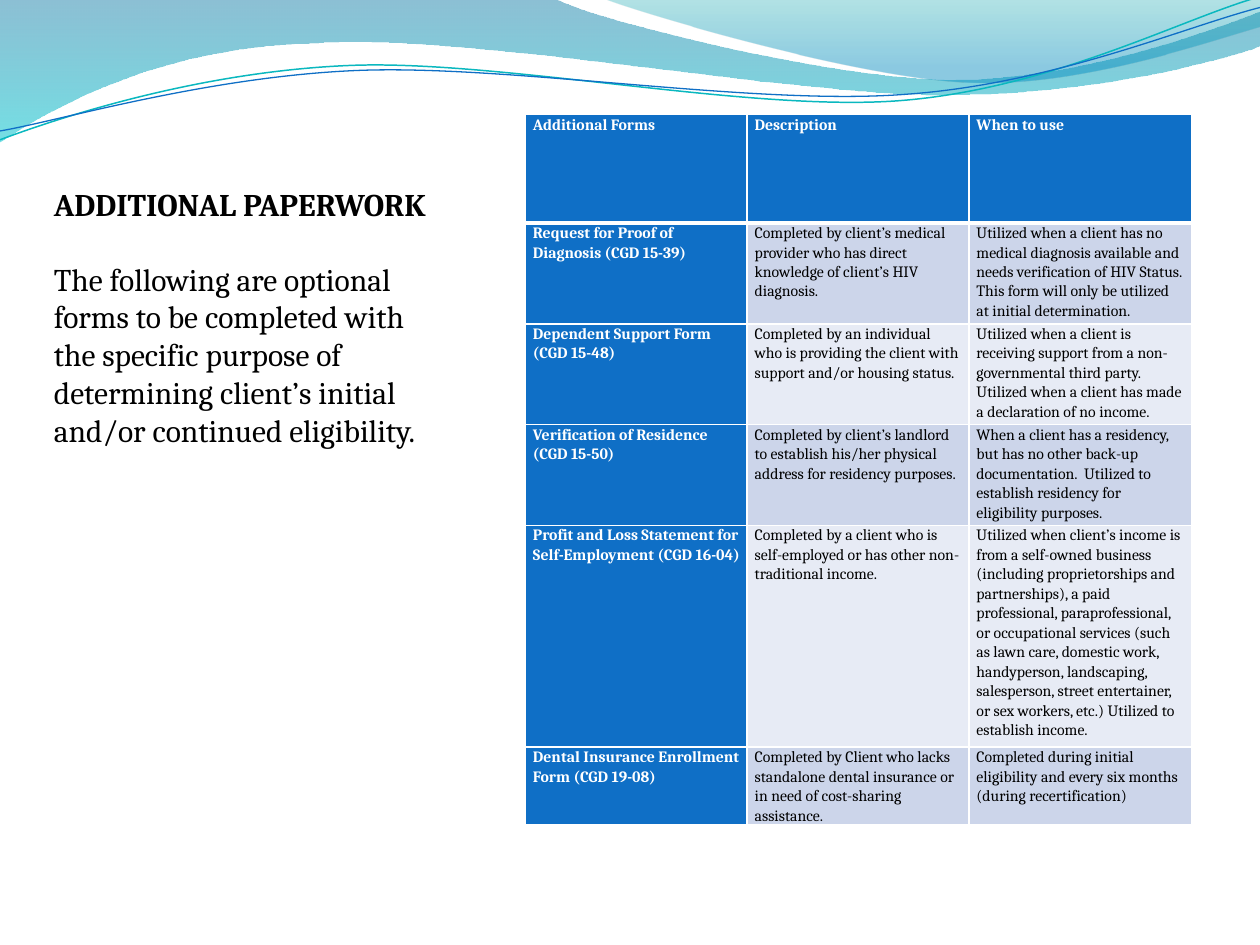
from math import cos, radians, sin

from lxml.etree import SubElement
from pptx import Presentation
from pptx.dml.color import RGBColor
from pptx.oxml.ns import qn
from pptx.util import Inches, Pt

BLACK = RGBColor(0, 0, 0)
WHITE = RGBColor(255, 255, 255)
BLUE = RGBColor(0x0F, 0x6F, 0xC6)
TEAL = RGBColor(0x0A, 0xB8, 0xBF)
BAND_DARK = RGBColor(0xCC, 0xD5, 0xEA)
BAND_LIGHT = RGBColor(0xE7, 0xEB, 0xF5)
DEEP_BLUE = RGBColor(0x00, 0x74, 0xA1)
CYAN = RGBColor(0x00, 0xC6, 0xCF)
DEEP_TEAL = RGBColor(0x00, 0xA1, 0xA9)
SKY = RGBColor(0x00, 0x8B, 0xBF)

BACK_WAVE = [
    [(0, 0)],
    [(4.4, -0.01)],
    [(4.76, 0.17), (6.64, 0.63), (7.58, 0.63)],
    [(8.53, 0.63), (9.58, 0.26), (10, 0.09)],
    [(10.01, 0.36)],
    [(9.83, 0.44), (8.7, 0.76), (7.46, 0.75)],
    [(6.22, 0.75), (3.82, 0.28), (2.57, 0.34)],
    [(1.29, 0.36), (0.46, 0.83), (-0.01, 1.13)],
]
FRONT_WAVE = [
    [(4.79, -0.01)],
    [(5.09, 0.11), (6.82, 0.62), (7.69, 0.65)],
    [(8.56, 0.69), (9.61, 0.32), (10, 0.21)],
    [(10, 0)],
]
TEAL_STRAND = [
    [(0, 1.11)],
    [(0.48, 0.93), (1.58, 0.57), (2.77, 0.52)],
    [(3.95, 0.47), (5.93, 0.89), (7.13, 0.8)],
    [(8.33, 0.71), (9.38, 0.15), (9.98, -0.02)],
]
BLUE_STRAND = [
    [(0, 1.04)],
    [(0.47, 0.96), (1.64, 0.61), (2.83, 0.56)],
    [(4.03, 0.51), (5.97, 0.84), (7.17, 0.75)],
    [(8.36, 0.67), (9.41, 0.21), (10, 0.06)],
]
STRAND_TILT = -2.7

FORMS = [
    ("Additional Forms", "Description", "When to use"),
    ("Request for Proof of Diagnosis (CGD 15-39)",
     "Completed by client’s medical provider who has direct knowledge of client’s HIV diagnosis.",
     "Utilized when a client has no medical diagnosis available and needs verification of HIV Status. "
     "This form will only be utilized at initial determination."),
    ("Dependent Support Form\n(CGD 15-48)",
     "Completed by an individual who is providing the client with support and/or housing status.",
     "Utilized when a client is receiving support from a non-governmental third party.  "
     "Utilized when a client has made a declaration of no income."),
    ("Verification of Residence\n(CGD 15-50)",
     "Completed by client’s landlord to establish his/her physical address for residency purposes.",
     "When a client has a residency, but has no other back-up documentation.  "
     "Utilized to establish residency for eligibility purposes."),
    ("Profit and Loss Statement for Self-Employment (CGD 16-04)",
     "Completed by a client who is self-employed or has other non-traditional income.",
     "Utilized when client’s income is from a self-owned business (including proprietorships and "
     "partnerships), a paid professional, paraprofessional, or occupational services (such as lawn care, "
     "domestic work, handyperson, landscaping, salesperson, street entertainer, or sex workers, etc.) "
     "Utilized to establish income."),
    ("Dental Insurance Enrollment Form (CGD 19-08)",
     "Completed by Client who lacks standalone dental insurance or in need of cost-sharing assistance.",
     "Completed during initial eligibility and every six months (during recertification)"),
]
COLUMN_WIDTHS = [1.76, 1.76, 1.77]
ROW_HEIGHTS = [0.86, 0.8, 0.8, 0.8, 1.76, 0.48]


def turn(x, y, degrees):
    angle = radians(degrees)
    return x * cos(angle) - y * sin(angle), x * sin(angle) + y * cos(angle)


class SlideWriter:
    font = "Cambria"

    def __init__(self, slide):
        self.slide = slide

    def outline(self, segments, close, tilt=0):
        curves = [[tuple(Inches(v) for v in turn(x, y, -tilt)) for x, y in segment]
                  for segment in segments]
        anchors = [curve[-1] for curve in curves]
        builder = self.slide.shapes.build_freeform(*anchors[0], scale=1.0)
        builder.add_line_segments(anchors[1:], close=close)
        shape = builder.convert_to_shape()
        shape.shadow.inherit = False
        for line, curve in zip(list(shape._element.iter(qn("a:lnTo"))), curves[1:]):
            if len(curve) == 3:
                line.tag = qn("a:cubicBezTo")
                for position, (x, y) in enumerate(curve[:2]):
                    control = SubElement(line, qn("a:pt"), x=str(x - shape.left), y=str(y - shape.top))
                    line.insert(position, control)
        center_x, center_y = shape.left + shape.width / 2, shape.top + shape.height / 2
        turned_x, turned_y = turn(center_x, center_y, tilt)
        shape.left += round(turned_x - center_x)
        shape.top += round(turned_y - center_y)
        shape.rotation = tilt
        return shape

    def wave(self, segments, stops):
        shape = self.outline(segments, True)
        shape.line.fill.background()
        shape.fill.gradient()
        shape.fill.gradient_angle = 270
        for stop, (position, color, _) in zip(shape.fill.gradient_stops, stops):
            stop.position = position
            stop.color.rgb = color
        colors = shape._element.spPr.iter(qn("a:srgbClr"))
        for color, (_, _, opacity) in zip(colors, stops):
            SubElement(color, qn("a:alpha"), val=str(opacity * 1000))

    def strand(self, segments, color, width):
        shape = self.outline(segments, False, STRAND_TILT)
        shape.fill.background()
        shape.line.color.rgb = color
        shape.line.width = Pt(width)

    def style(self, paragraph, size, color, bold):
        for run in paragraph.runs:
            run.font.name = self.font
            run.font.size = Pt(size)
            run.font.color.rgb = color
            run.font.bold = bold

    def text(self, left, top, width, height, heading, body):
        frame = self.slide.shapes.add_textbox(
            Inches(left), Inches(top), Inches(width), Inches(height)).text_frame
        frame.word_wrap = True
        frame.text = f"{heading}\n{body}"
        title, explanation = frame.paragraphs
        explanation.space_before = Pt(21)
        self.style(title, 18, BLACK, True)
        self.style(explanation, 18, BLACK, False)

    def border(self, cell, side, width):
        line = SubElement(cell._tc.get_or_add_tcPr(), qn(f"a:ln{side}"), w=str(Pt(width)))
        fill = SubElement(line, qn("a:solidFill"))
        SubElement(fill, qn("a:srgbClr"), val=str(WHITE))

    def cell(self, cell, text, row, column):
        cell.margin_left = cell.margin_right = Inches(0.06)
        cell.margin_top = cell.margin_bottom = 0
        widths = {"L": 1, "R": 1, "T": 3 if row == 1 else 1, "B": 3 if row == 0 else 1}
        for side, width in widths.items():
            self.border(cell, side, width)
        is_label = row == 0 or column == 0
        cell.fill.solid()
        cell.fill.fore_color.rgb = BLUE if is_label else BAND_DARK if row % 2 else BAND_LIGHT
        cell.text_frame.text = text
        for paragraph in cell.text_frame.paragraphs:
            paragraph.line_spacing = 1.07
            self.style(paragraph, 9, WHITE if is_label else BLACK, is_label)

    def table(self, left, top, rows, widths, heights):
        table = self.slide.shapes.add_table(
            len(rows), len(widths), Inches(left), Inches(top),
            Inches(sum(widths)), Inches(sum(heights))).table
        for column, width in zip(table.columns, widths):
            column.width = Inches(width)
        for row, height in zip(table.rows, heights):
            row.height = Inches(height)
        for r, texts in enumerate(rows):
            for c, text in enumerate(texts):
                self.cell(table.cell(r, c), text, r, c)


def main():
    deck = Presentation()
    deck.slide_width, deck.slide_height = Inches(10), Inches(7.5)
    writer = SlideWriter(deck.slides.add_slide(deck.slide_layouts[6]))
    writer.wave(BACK_WAVE, [(0, DEEP_BLUE, 45), (1, CYAN, 55)])
    writer.wave(FRONT_WAVE, [(0, DEEP_TEAL, 30), (0.8, SKY, 45)])
    writer.strand(TEAL_STRAND, TEAL, 0.85)
    writer.strand(BLUE_STRAND, BLUE, 0.75)
    writer.table(4.17, 0.91, FORMS, COLUMN_WIDTHS, ROW_HEIGHTS)
    writer.text(
        0.33, 1.42, 3.33, 2.52, "ADDITIONAL PAPERWORK",
        "The following are optional forms to be completed with the specific purpose of "
        "determining client’s initial and/or continued eligibility.")
    deck.save("out.pptx")


if __name__ == "__main__":
    main()
